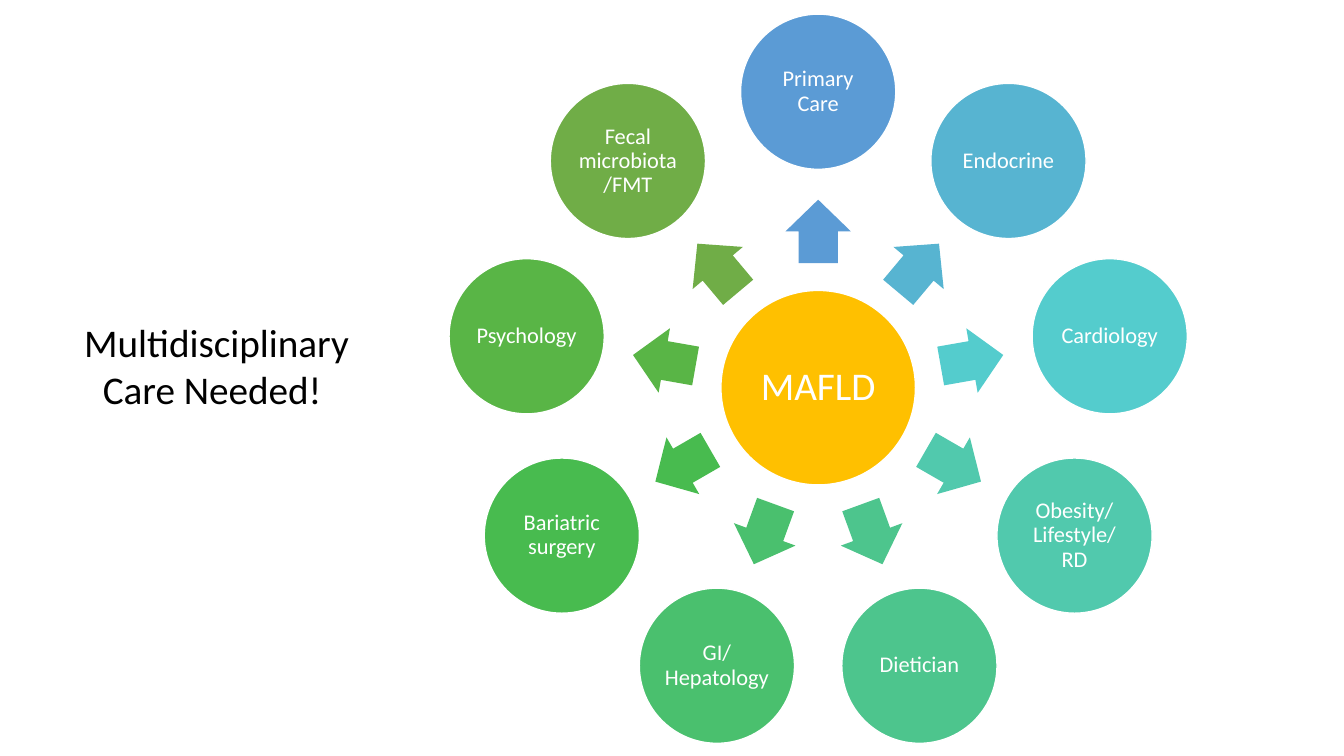
import math

import pptx
import pptx.util
import pptx.dml.color
import pptx.enum.shapes
import pptx.enum.text

RGBColor = pptx.dml.color.RGBColor
Shapes = pptx.enum.shapes.MSO_SHAPE

WHITE = RGBColor(0xFF, 0xFF, 0xFF)
BLACK = RGBColor(0x00, 0x00, 0x00)
AMBER = RGBColor(0xFF, 0xC0, 0x00)
BLUE = RGBColor(0x5B, 0x9B, 0xD5)
SKY = RGBColor(0x57, 0xB4, 0xD1)
TURQUOISE = RGBColor(0x54, 0xCC, 0xCD)
AQUA = RGBColor(0x51, 0xC9, 0xAD)
MINT = RGBColor(0x4D, 0xC5, 0x8D)
JADE = RGBColor(0x4A, 0xC0, 0x6E)
EMERALD = RGBColor(0x48, 0xBB, 0x4F)
LEAF = RGBColor(0x59, 0xB5, 0x46)
OLIVE = RGBColor(0x70, 0xAD, 0x47)

# Clockwise from the top
SPECIALTIES = [
    ("Primary Care", BLUE),
    ("Endocrine", SKY),
    ("Cardiology", TURQUOISE),
    ("Obesity/Lifestyle/RD", AQUA),
    ("Dietician", MINT),
    ("GI/Hepatology", JADE),
    ("Bariatric surgery", EMERALD),
    ("Psychology", LEAF),
    ("Fecal microbiota/FMT", OLIVE),
]

# Grid of square cells, three to the inch
COLUMNS = 40
HUB_COLUMN, HUB_ROW = 24.35, 11.54
HUB_SIZE = 5.79
SPECIALTY_SIZE = 4.62
SPECIALTY_RADIUS = 8.81
ARROW_RADIUS = 4.65
ARROW_LENGTH, ARROW_WIDTH = 1.89, 1.95


class CareSlide:
    font = "Calibri"

    def __init__(self, presentation):
        self.cell = presentation.slide_width / COLUMNS
        self.slide = presentation.slides.add_slide(presentation.slide_layouts[6])

    def cells(self, *lengths):
        """Convert grid lengths to slide units."""
        return [round(length * self.cell) for length in lengths]

    def add_label(self, frame, text, size, color):
        frame.word_wrap = True
        paragraph = frame.paragraphs[0]
        paragraph.alignment = pptx.enum.text.PP_ALIGN.CENTER
        run = paragraph.add_run()
        run.text = text
        run.font.name = self.font
        run.font.size = pptx.util.Pt(size)
        run.font.color.rgb = color
        return paragraph

    def centred_shape(self, kind, column, row, width, height, color):
        """Add a filled shape whose centre is at the given column and row."""
        shape = self.slide.shapes.add_shape(
            kind, *self.cells(column - width / 2, row - height / 2, width, height))
        shape.shadow.inherit = False
        shape.fill.solid()
        shape.fill.fore_color.rgb = color
        shape.line.fill.background()
        return shape

    def circle(self, column, row, diameter, color, label, size, inset):
        disc = self.centred_shape(Shapes.OVAL, column, row, diameter, diameter, color)
        disc.line.color.rgb = WHITE
        disc.line.width = pptx.util.Pt(1)
        frame = disc.text_frame
        frame.vertical_anchor = pptx.enum.text.MSO_ANCHOR.MIDDLE
        frame.margin_left = frame.margin_right = pptx.util.Inches(inset)
        frame.margin_top = frame.margin_bottom = pptx.util.Inches(inset)
        self.add_label(frame, label, size, WHITE).line_spacing = 0.9

    def arrow(self, column, row, angle, color):
        arrow = self.centred_shape(
            Shapes.RIGHT_ARROW, column, row, ARROW_LENGTH, ARROW_WIDTH, color)
        arrow.adjustments[0] = 0.6
        arrow.adjustments[1] = 0.5
        arrow.rotation = angle % 360

    def heading(self, column, row, width, height, text):
        box = self.slide.shapes.add_textbox(*self.cells(column, row, width, height))
        self.add_label(box.text_frame, text, 28, BLACK)


def around_hub(radius, angle):
    """Column and row at a clockwise angle from the hub's right."""
    turn = math.radians(angle)
    return HUB_COLUMN + radius * math.cos(turn), HUB_ROW + radius * math.sin(turn)


def main():
    presentation = pptx.Presentation()
    presentation.slide_width = pptx.util.Inches(13.33)
    presentation.slide_height = pptx.util.Inches(7.5)
    care = CareSlide(presentation)

    care.circle(HUB_COLUMN, HUB_ROW, HUB_SIZE, AMBER, "MAFLD", 28, 0.04)
    for index, (specialty, color) in enumerate(SPECIALTIES):
        angle = index * 360 / len(SPECIALTIES) - 90
        care.arrow(*around_hub(ARROW_RADIUS, angle), angle, color)
        care.circle(*around_hub(SPECIALTY_RADIUS, angle), SPECIALTY_SIZE, color,
                    specialty, 16, 0.02)
    care.heading(1.17, 9.33, 10.29, 3.12, " Multidisciplinary Care Needed!")

    presentation.save("out.pptx")


if __name__ == "__main__":
    main()
